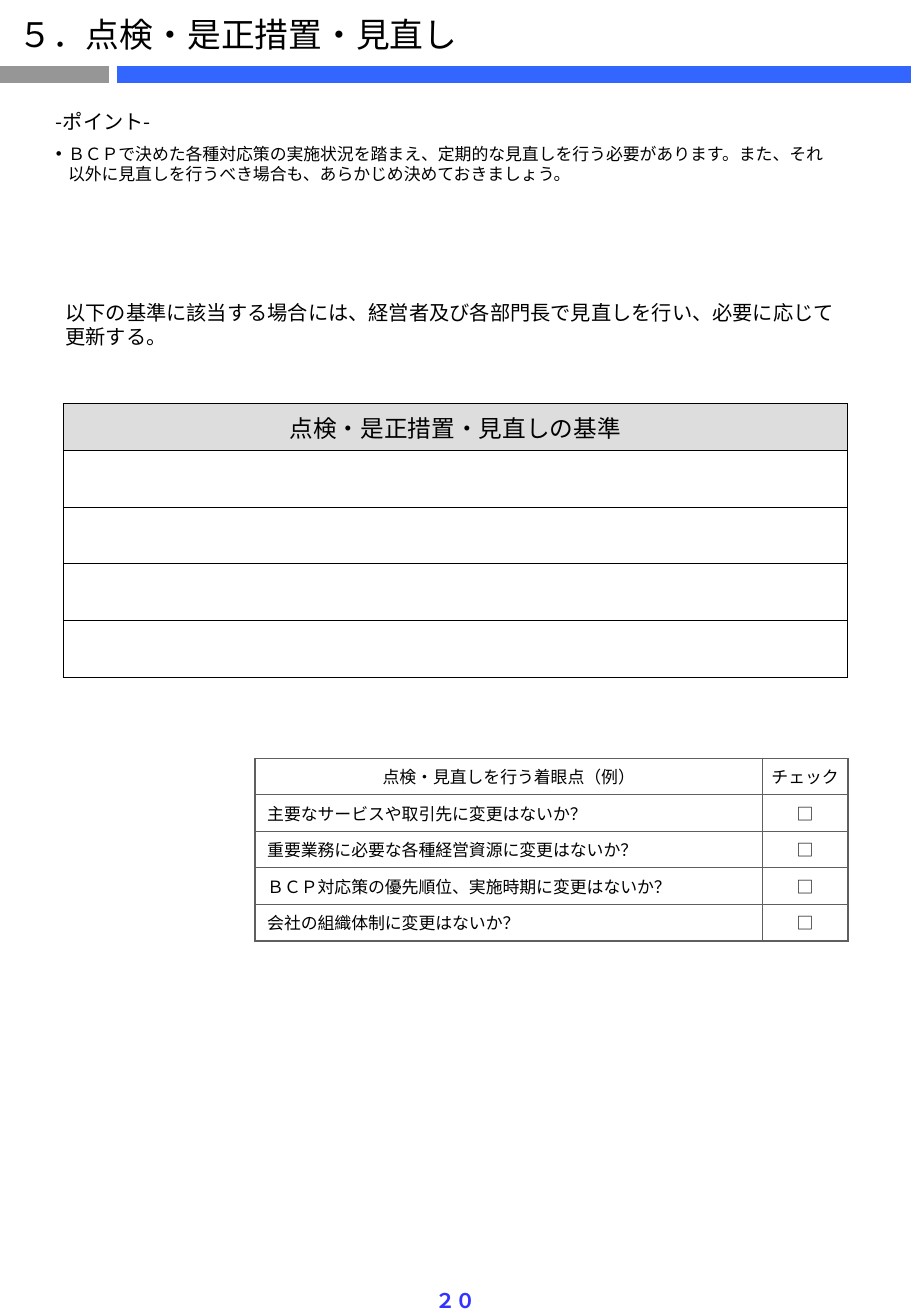
from lxml import etree
from pptx import Presentation
from pptx.dml.color import RGBColor
from pptx.enum.shapes import MSO_CONNECTOR
from pptx.enum.text import MSO_ANCHOR, MSO_AUTO_SIZE, PP_ALIGN
from pptx.oxml.ns import qn
from pptx.util import Inches, Pt

LEFT, CENTER = PP_ALIGN.LEFT, PP_ALIGN.CENTER
TOP, MIDDLE = MSO_ANCHOR.TOP, MSO_ANCHOR.MIDDLE
NO_AUTOFIT = MSO_AUTO_SIZE.NONE
STRAIGHT = MSO_CONNECTOR.STRAIGHT
WIDTH, HEIGHT = Inches(7.5), Inches(10.83)
FONT = "Noto Sans CJK JP"
BLACK = "000000"

CHECKPOINTS = [
    "主要なサービスや取引先に変更はないか？",
    "重要業務に必要な各種経営資源に変更はないか？",
    "ＢＣＰ対応策の優先順位、実施時期に変更はないか？",
    "会社の組織体制に変更はないか？",
]


def across(percent):
    return round(WIDTH * percent / 100)


def down(percent):
    return round(HEIGHT * percent / 100)


def color(hex_value):
    return RGBColor.from_string(hex_value)


def format_paragraph(paragraph, size, align=LEFT, hex_value=BLACK, bold=False, before=0, after=0):
    paragraph.alignment = align
    paragraph.space_before, paragraph.space_after = Pt(before), Pt(after)
    font = paragraph.font
    font.name, font.size, font.bold = FONT, Pt(size), bold
    font.color.rgb = color(hex_value)
    defaults = paragraph._p.pPr.find(qn("a:defRPr"))
    etree.SubElement(defaults, qn("a:ea"), typeface=FONT)


def place(shape, left, top, width, height):
    """Position a text shape, in percent of the slide, and fix its frame."""
    shape.left, shape.top = across(left), down(top)
    shape.width, shape.height = across(width), down(height)
    frame = shape.text_frame
    frame.auto_size, frame.word_wrap = NO_AUTOFIT, True
    frame.vertical_anchor = TOP
    return frame


def set_bullet(paragraph, symbol=None):
    """Give a hanging indent, with a bullet if a symbol is passed."""
    properties = paragraph._p.get_or_add_pPr()
    properties.set("marL", str(Inches(0.1)))
    properties.set("indent", str(-Inches(0.1)))
    if symbol:
        bullet = etree.Element(qn("a:buChar"), char=symbol)
    else:
        bullet = etree.Element(qn("a:buNone"))
    properties.find(qn("a:defRPr")).addprevious(bullet)


def add_bar(slide, start, end, hex_value):
    bar = slide.shapes.add_connector(STRAIGHT, across(start), down(5.63), across(end), down(5.63))
    bar.line.color.rgb = color(hex_value)
    bar.line.width = Pt(10)
    etree.SubElement(bar._element.spPr, qn("a:effectLst"))


def add_text(slide, box, text, **style):
    frame = place(slide.shapes.add_textbox(0, 0, 0, 0), *box)
    frame.text = text
    format_paragraph(frame.paragraphs[0], 12, **style)


def set_borders(cell, hex_value, points):
    properties = cell._tc.get_or_add_tcPr()
    for side in ("lnL", "lnR", "lnT", "lnB"):
        line = etree.SubElement(properties, qn(f"a:{side}"), w=str(Pt(points)))
        fill = etree.SubElement(line, qn("a:solidFill"))
        etree.SubElement(fill, qn("a:srgbClr"), val=hex_value)


def add_grid(slide, left, top, columns, rows, border):
    """Add an unstyled table; columns and rows are percent of the slide."""
    frame = slide.shapes.add_table(
        len(rows), len(columns), across(left), down(top), across(sum(columns)), down(sum(rows)))
    table = frame.table
    table.first_row = table.horz_banding = False
    for column, width in zip(table.columns, columns):
        column.width = across(width)
    for row, height in zip(table.rows, rows):
        row.height = down(height)
    for cell in table.iter_cells():
        set_borders(cell, *border)
        cell.fill.background()
        cell.vertical_anchor = MIDDLE
    return table


def fill_cell(cell, text, size, align=LEFT, before=0):
    cell.text = text
    format_paragraph(cell.text_frame.paragraphs[0], size, align, before=before)


def add_criteria_table(slide):
    table = add_grid(slide, 6.93, 30.66, [86.13], [3.14] + [4.32] * 4, (BLACK, 0.5))
    header = table.cell(0, 0)
    header.fill.solid()
    header.fill.fore_color.rgb = color("DDDDDD")
    fill_cell(header, "点検・是正措置・見直しの基準", 14, CENTER, before=2.8)
    for row in range(1, 5):
        fill_cell(table.cell(row, 0), "", 14)


def add_checklist(slide):
    table = add_grid(slide, 28, 57.62, [55.67, 9.4], [2.54] * 5, ("5F5F5F", 1))
    fill_cell(table.cell(0, 0), "点検・見直しを行う着眼点（例）", 10, CENTER)
    check = table.cell(0, 1)
    check.margin_left = check.margin_right = Inches(0.04)
    fill_cell(check, "チェック", 10, CENTER)
    for row, checkpoint in enumerate(CHECKPOINTS, 1):
        fill_cell(table.cell(row, 0), checkpoint, 10)
        fill_cell(table.cell(row, 1), "□", 10, CENTER)


def fill_title(slide):
    frame = place(slide.shapes.title, 0.67, 0.55, 53.6, 3.97)
    frame.text = "５．点検・是正措置・見直し"
    format_paragraph(frame.paragraphs[0], 20)


def fill_points(slide):
    frame = place(slide.placeholders[1], 4.8, 7.85, 92.4, 6.65)
    frame.text = (
        "-ポイント-\n"
        "ＢＣＰで決めた各種対応策の実施状況を踏まえ、定期的な見直しを行う必要があります。また、それ\v"
        "以外に見直しを行うべき場合も、あらかじめ決めておきましょう。")
    for paragraph, size, symbol in zip(frame.paragraphs, (12, 10), (None, "•")):
        format_paragraph(paragraph, size, after=6)
        set_bullet(paragraph, symbol)


def main():
    presentation = Presentation()
    presentation.slide_width, presentation.slide_height = WIDTH, HEIGHT
    slide = presentation.slides.add_slide(presentation.slide_layouts[1])
    add_bar(slide, 0, 12, "969696")
    add_bar(slide, 12.8, 100, "3366FF")
    fill_title(slide)
    fill_points(slide)
    add_text(
        slide, (5.87, 22.35, 89.47, 6.56),
        "以下の基準に該当する場合には、経営者及び各部門長で見直しを行い、必要に応じて\v更新する。",
        before=2.4)
    add_criteria_table(slide)
    add_checklist(slide)
    add_text(slide, (46.4, 97.41, 7.2, 2.86), "２０", align=CENTER, hex_value="3333FF", bold=True)
    presentation.save("out.pptx")


if __name__ == "__main__":
    main()
